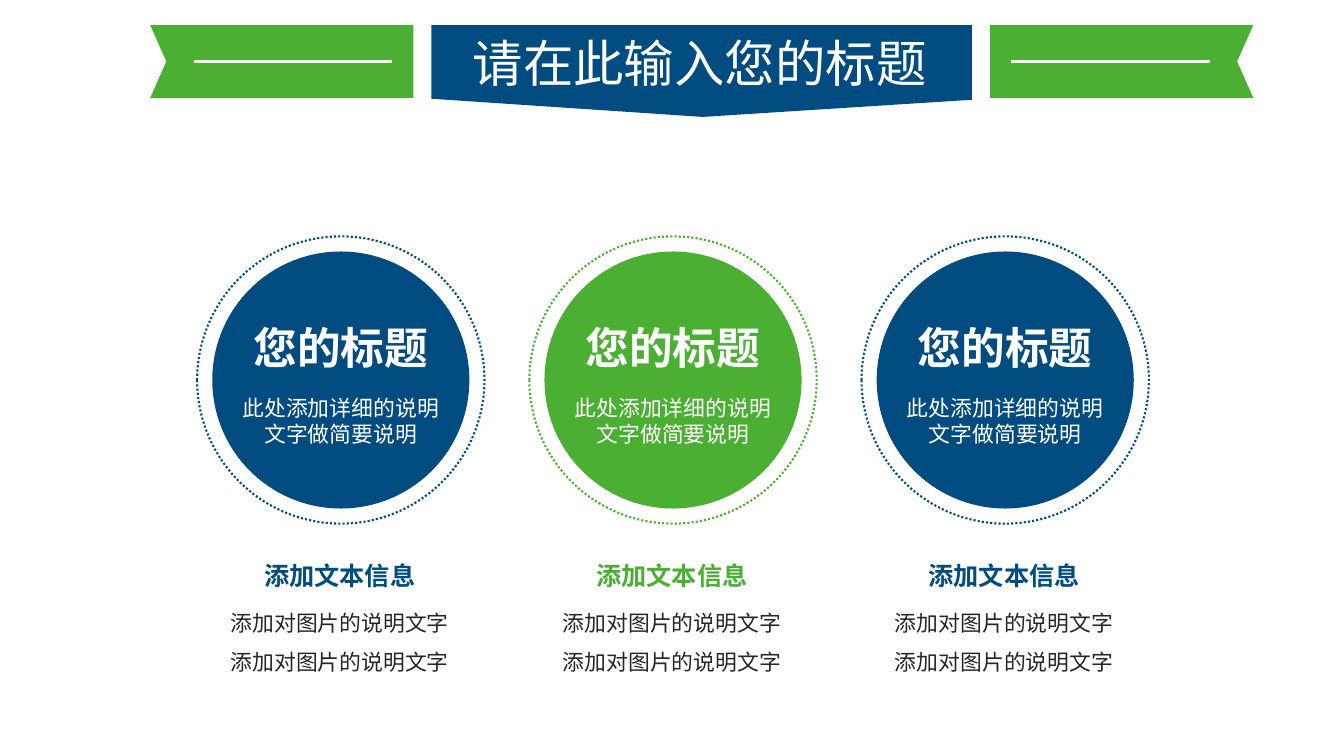
import pptx
import pptx.util
import pptx.dml.color
import pptx.enum.dml
import pptx.enum.shapes
import pptx.enum.text
import pptx.oxml.ns
import lxml.etree

RGB = pptx.dml.color.RGBColor
BLUE = RGB(0x00, 0x4C, 0x80)
GREEN = RGB(0x4B, 0xAF, 0x33)
WHITE = RGB(0xFF, 0xFF, 0xFF)
DARK = RGB(0x26, 0x26, 0x26)
FONT = "Noto Sans CJK SC"

# Content
TITLE = "请在此输入您的标题"
ITEMS = [
    (color, "您的标题", "此处添加详细的说明文字做简要说明",
     "添加文本信息", "添加对图片的说明文字添加对图片的说明文字")
    for color in (BLUE, GREEN, BLUE)
]

# Layout in inches
WIDE, HIGH = 13.33, 7.5
AXIS = 6.96           # middle of the header
TOP, FOOT = 0.25, 0.97
FIRST, STEP = 3.38, 3.295   # centres of the columns
MID = 3.77            # centre height of the circles
DISC, RING = 2.55, 2.85

inch = pptx.util.Inches
qn = pptx.oxml.ns.qn
deck = pptx.Presentation()
deck.slide_width, deck.slide_height = inch(WIDE), inch(HIGH)
slide = deck.slides.add_slide(deck.slide_layouts[6])
shapes = slide.shapes


def paint(shape, color):
    shape.shadow.inherit = False
    shape.fill.solid()
    shape.fill.fore_color.rgb = color
    shape.line.fill.background()


def outline(points, color):
    spots = [(inch(x), inch(y)) for x, y in points]
    form = shapes.build_freeform(*spots[0])
    form.add_line_segments(spots[1:], close=True)
    paint(form.convert_to_shape(), color)


def rule(left, right, y):
    line = shapes.add_connector(
        pptx.enum.shapes.MSO_CONNECTOR.STRAIGHT,
        inch(left), inch(y), inch(right), inch(y))
    line.line.color.rgb = WHITE
    line.line.width = pptx.util.Pt(1.75)
    props = line._element.spPr
    lxml.etree.SubElement(props, qn("a:effectLst"))


def circle(mid, size):
    return shapes.add_shape(
        pptx.enum.shapes.MSO_SHAPE.OVAL, inch(mid - size / 2),
        inch(MID - size / 2), inch(size), inch(size))


def style(para, size, color, bold=False):
    for run in para.runs:
        run.font.size = pptx.util.Pt(size)
        run.font.bold = bold
        run.font.color.rgb = color
        run.font.name = FONT
        east = lxml.etree.SubElement(run.font._element, qn("a:ea"))
        east.set("typeface", FONT)


def block(mid, top, width, height, head, body, gap, space):
    """Centred heading and body; each is (text, size, color)."""
    box = shapes.add_textbox(
        inch(mid - width / 2), inch(top), inch(width), inch(height))
    frame = box.text_frame
    frame.word_wrap = True
    frame.margin_left = frame.margin_right = inch(0.13)
    frame.margin_top = frame.margin_bottom = inch(0.06)
    frame.text = head[0] + "\n" + body[0]
    first, last = frame.paragraphs
    style(first, *head[1:], bold=True)
    style(last, *body[1:])
    for para in (first, last):
        para.alignment = pptx.enum.text.PP_ALIGN.CENTER
    last.space_before = pptx.util.Pt(gap)
    last.line_spacing = space


# Header banner
half = 2.68
outline([(AXIS - half, TOP), (AXIS + half, TOP), (AXIS + half, 0.99),
         (AXIS + 0.01, 1.16), (AXIS - half, 0.98)], BLUE)

# Ribbons, mirrored about the banner
level = (TOP + FOOT) / 2
for side in (-1, 1):
    near, far, notch = (AXIS + side * d for d in (2.86, 5.47, 5.31))
    outline([(near, TOP), (far, TOP), (notch, level),
             (far, FOOT), (near, FOOT)], GREEN)
    rule(AXIS + side * 3.07, AXIS + side * 5.04, level)

# Title
box = shapes.add_textbox(inch(4.59), inch(0.27), inch(4.75), inch(0.71))
box.text_frame.word_wrap = False
box.text_frame.text = TITLE
style(box.text_frame.paragraphs[0], 36, WHITE)

# Columns: disc, dotted ring, text inside, text below
for col, (color, name, note, head, body) in enumerate(ITEMS):
    mid = FIRST + col * STEP
    paint(circle(mid, DISC), color)
    ring = circle(mid, RING)
    ring.shadow.inherit = False
    ring.fill.background()
    ring.line.color.rgb = color
    ring.line.width = pptx.util.Pt(1.5)
    ring.line.dash_style = pptx.enum.dml.MSO_LINE.ROUND_DOT
    block(mid, 3.12, 2.22, 1.41, (name, 31.2, WHITE),
          (note, 15.6, WHITE), 15.5, 1.0)
    block(mid - 0.01, 5.5, 2.56, 1.48, (head, 18, color),
          (body, 15.6, DARK), 3.9, 1.5)

deck.save("out.pptx")
